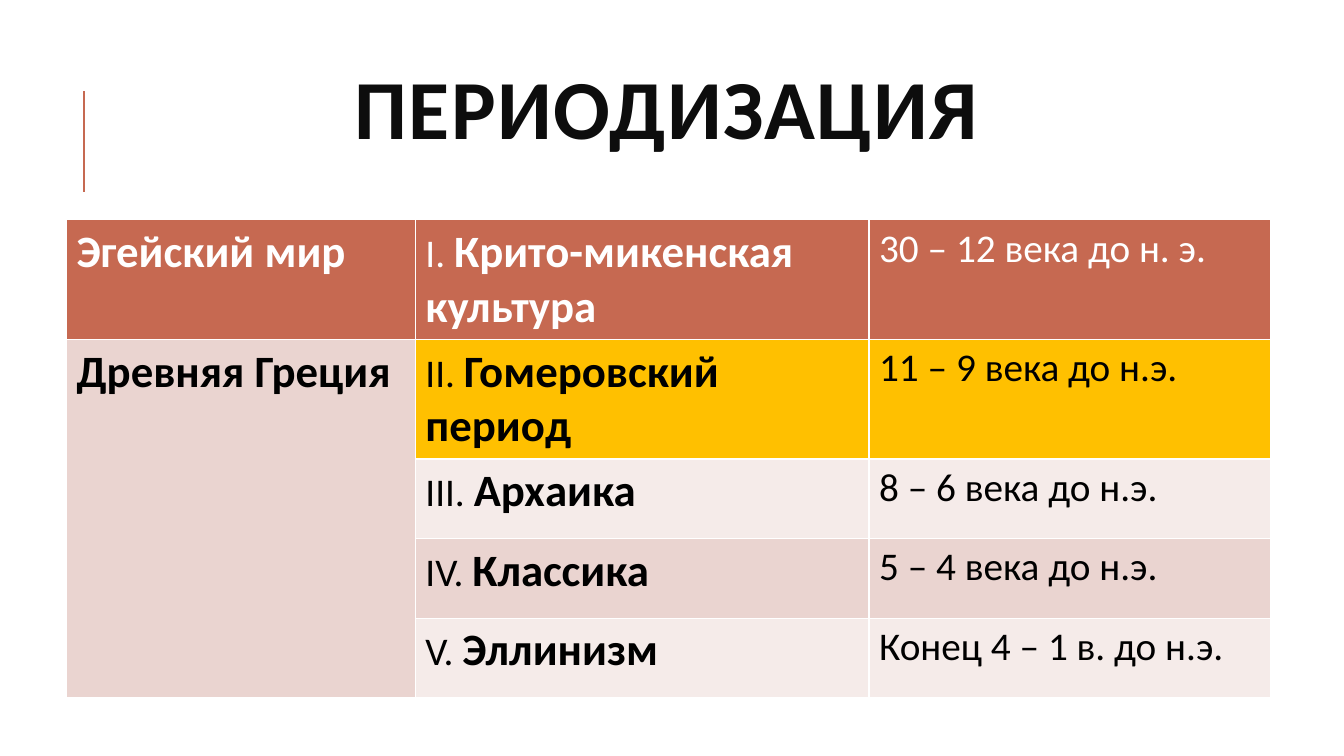
import pptx
import pptx.dml.color
import pptx.enum.shapes
import pptx.enum.text
import pptx.util
from lxml import etree
from pptx.oxml.ns import qn

RGBColor = pptx.dml.color.RGBColor
Inches = pptx.util.Inches
Pt = pptx.util.Pt

TERRACOTTA = RGBColor(0xC6, 0x69, 0x51)
ROSE = RGBColor(0xEA, 0xD4, 0xD0)
PALE_ROSE = RGBColor(0xF5, 0xEB, 0xE9)
GOLD = RGBColor(0xFF, 0xC0, 0x00)
WHITE = RGBColor(0xFF, 0xFF, 0xFF)
BLACK = RGBColor(0x00, 0x00, 0x00)
TITLE_INK = RGBColor(0x0D, 0x0D, 0x0D)

FONT = "Calibri"
NAME_SIZE, DETAIL_SIZE = 32, 28
COLUMN_WIDTHS = (3.46, 4.5, 3.98)
HEADER_HEIGHT, ROW_HEIGHT = 0.82, 0.79

# Numeral, period, dates, fill, text colour
PERIODS = (
    ("I. ", "Крито-микенская культура", "30 – 12 века до н. э.", TERRACOTTA, WHITE),
    ("II. ", "Гомеровский период", "11 – 9 века до н.э.", GOLD, BLACK),
    ("III. ", "Архаика", "8 – 6 века до н.э.", PALE_ROSE, BLACK),
    ("IV. ", "Классика", "5 – 4 века до н.э.", ROSE, BLACK),
    ("V. ", "Эллинизм", "Конец 4 – 1 в. до н.э.", PALE_ROSE, BLACK),
)


def format_run(run, size, bold, color):
    run.font.name = FONT
    run.font.size = Pt(size)
    run.font.bold = bold
    run.font.color.rgb = color


def add_title(slide, text):
    title = slide.shapes.title
    title.left, title.top = Inches(1.11), Inches(0.35)
    title.width, title.height = Inches(11), Inches(1.59)
    frame = title.text_frame
    frame.text = text
    frame.word_wrap = True
    frame.auto_size = pptx.enum.text.MSO_AUTO_SIZE.NONE
    frame.vertical_anchor = pptx.enum.text.MSO_ANCHOR.MIDDLE
    paragraph = frame.paragraphs[0]
    paragraph.alignment = pptx.enum.text.PP_ALIGN.CENTER
    paragraph.line_spacing = 0.8
    run = paragraph.runs[0]
    format_run(run, 60, True, TITLE_INK)
    run.font._element.set("spc", "100")


def add_accent_line(slide):
    x = Inches(0.83)
    line = slide.shapes.add_connector(
        pptx.enum.shapes.MSO_CONNECTOR.STRAIGHT, x, Inches(1.9), x, Inches(0.9))
    line.line.color.rgb = TERRACOTTA
    line.line.width = Pt(1.5)
    etree.SubElement(line._element.spPr, qn("a:effectLst"))


def fill_cell(cell, parts, fill, color):
    """Write (text, size, bold) parts into a cell."""
    cell.fill.solid()
    cell.fill.fore_color.rgb = fill
    paragraph = cell.text_frame.paragraphs[0]
    for text, size, bold in parts:
        run = paragraph.add_run()
        run.text = text
        format_run(run, size, bold, color)


def add_period_table(slide):
    height = HEADER_HEIGHT + ROW_HEIGHT * (len(PERIODS) - 1)
    table = slide.shapes.add_table(
        len(PERIODS), len(COLUMN_WIDTHS), Inches(0.66), Inches(2.18),
        Inches(sum(COLUMN_WIDTHS)), Inches(height)).table
    for column, width in zip(table.columns, COLUMN_WIDTHS):
        column.width = Inches(width)
    for index, row in enumerate(table.rows):
        row.height = Inches(ROW_HEIGHT if index else HEADER_HEIGHT)

    # Civilisations; the second spans all later periods
    table.cell(1, 0).merge(table.cell(len(PERIODS) - 1, 0))
    fill_cell(table.cell(0, 0), [("Эгейский мир", NAME_SIZE, True)], TERRACOTTA, WHITE)
    fill_cell(table.cell(1, 0), [("Древняя Греция", NAME_SIZE, True)], ROSE, BLACK)

    # Periods and dates
    for index, (numeral, period, dates, fill, color) in enumerate(PERIODS):
        name_parts = [(numeral, DETAIL_SIZE, False), (period, NAME_SIZE, True)]
        fill_cell(table.cell(index, 1), name_parts, fill, color)
        fill_cell(table.cell(index, 2), [(dates, DETAIL_SIZE, False)], fill, color)


def main():
    presentation = pptx.Presentation()
    presentation.slide_width = Inches(13.33)
    presentation.slide_height = Inches(7.5)
    slide = presentation.slides.add_slide(presentation.slide_layouts[5])
    add_accent_line(slide)
    add_period_table(slide)
    add_title(slide, "ПЕРИОДИЗАЦИЯ")
    presentation.save("out.pptx")


if __name__ == "__main__":
    main()
